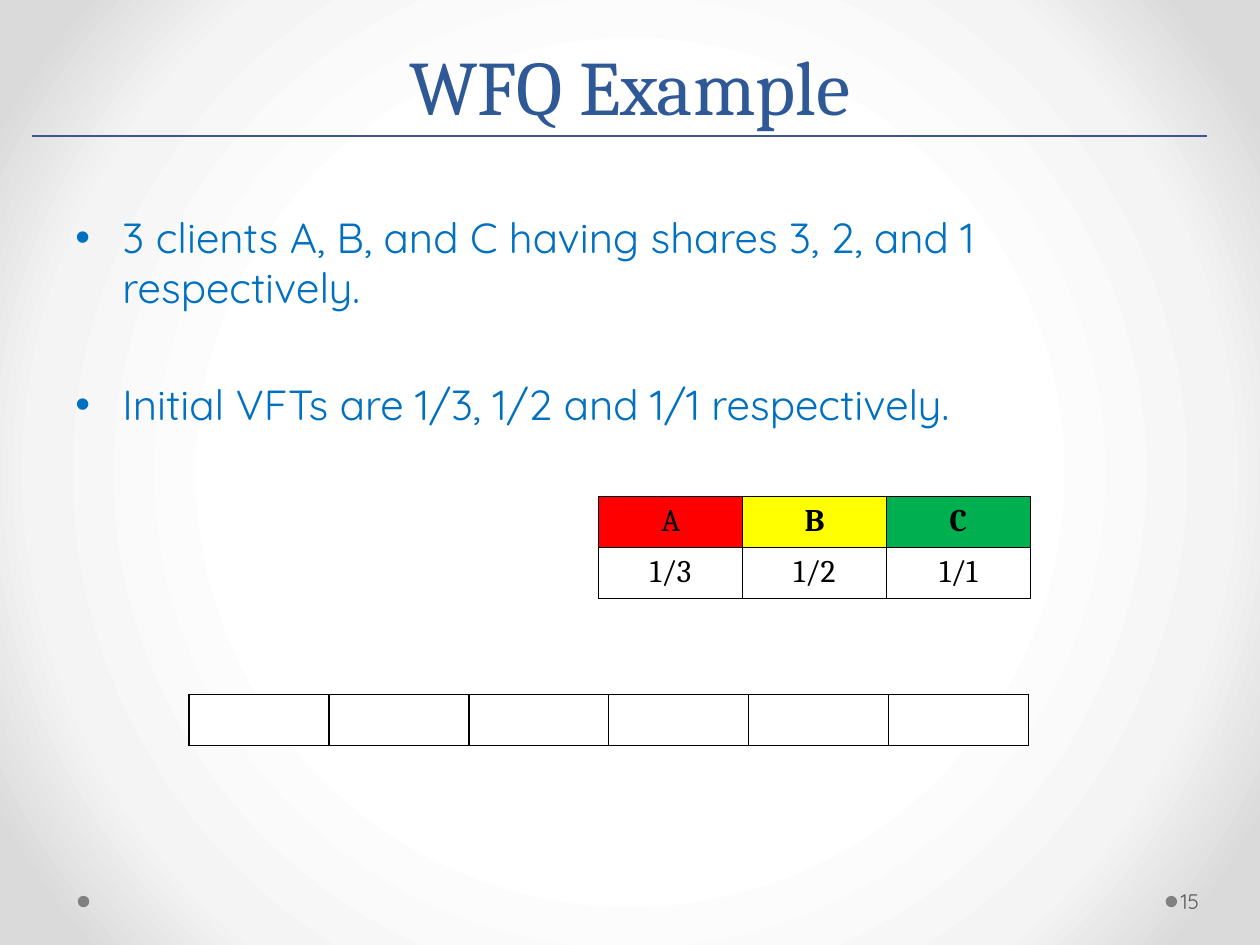
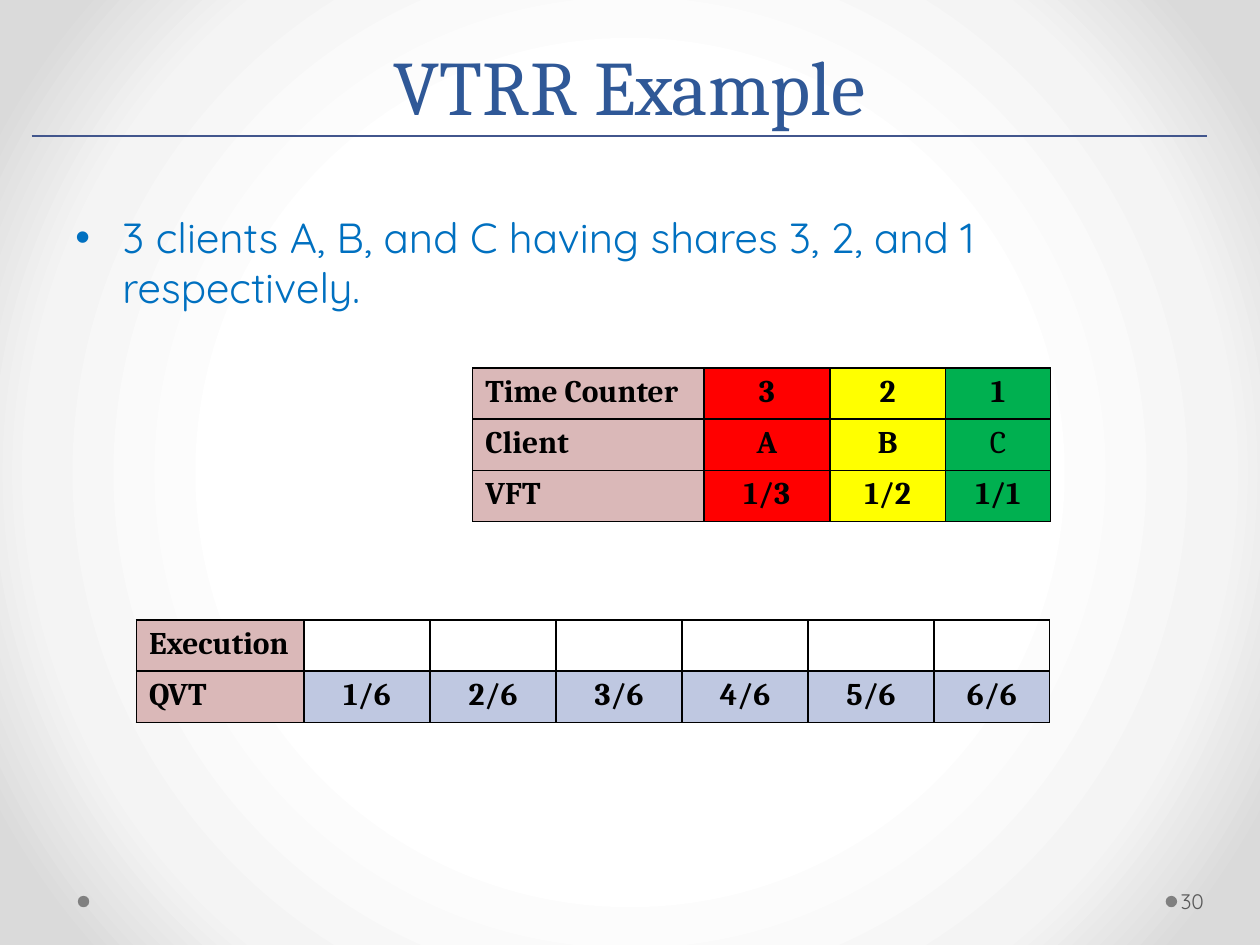
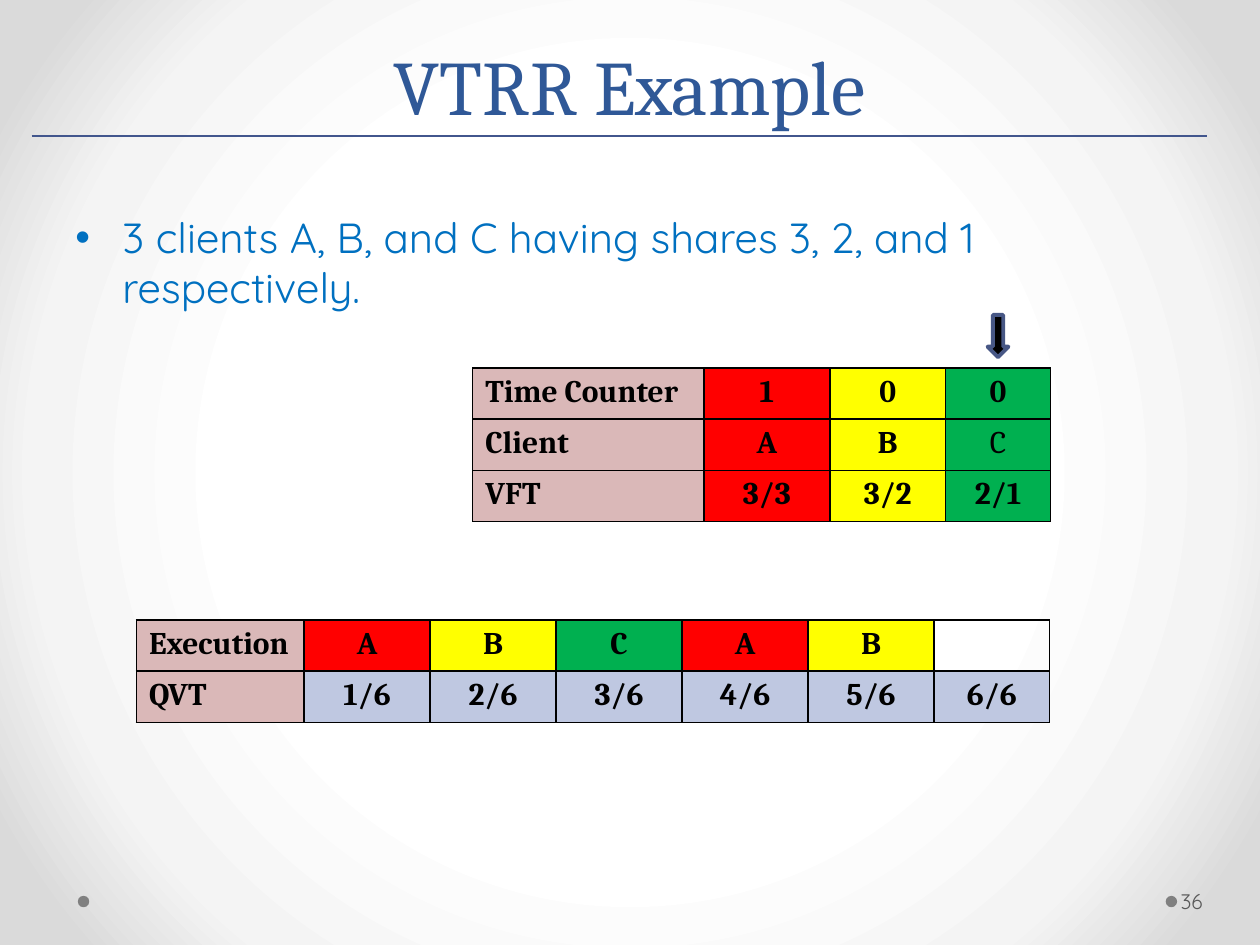
from dataclasses import dataclass

from lxml import etree
from pptx import Presentation
from pptx.dml.color import RGBColor
from pptx.enum.shapes import MSO_CONNECTOR, MSO_SHAPE
from pptx.enum.text import MSO_ANCHOR, PP_ALIGN
from pptx.oxml import parse_xml
from pptx.oxml.ns import nsdecls, qn
from pptx.util import Cm, Pt

STRAIGHT = MSO_CONNECTOR.STRAIGHT
ELLIPSE = MSO_SHAPE.OVAL
DOWN_ARROW = MSO_SHAPE.DOWN_ARROW
TOP, MIDDLE, BOTTOM = MSO_ANCHOR.TOP, MSO_ANCHOR.MIDDLE, MSO_ANCHOR.BOTTOM
LEFT, CENTER = PP_ALIGN.LEFT, PP_ALIGN.CENTER


@dataclass(frozen=True)
class Theme:
    serif: str = "Cambria"
    sans: str = "Quicksand"
    title_size: int = 44
    title_spacing: int = 58
    body_size: int = 24
    table_size: int = 18
    page_size: int = 12
    title: str = "2F5897"
    body: str = "0070C0"
    page: str = "595959"
    rule: str = "42568D"
    dot: str = "808080"
    ink: str = "000000"
    white: str = "FFFFFF"
    header: str = "DAB8B8"
    time: str = "BFC8E1"
    arrow_line: str = "475785"
    backdrop: tuple = ((50, "FFFFFF"), (76, "F4F4F4"), (92, "DADADA"))


THEME = Theme()
CLIENT_FILLS = {"A": "FF0000", "B": "FFFF00", "C": "00B050"}

TITLE_BOX = (1.27, 0.43, 22.86, 2.34)
BODY_BOX = (1.27, 4.14, 22.86, 13.64)
PAGE_BOX = (23.72, 17.65, 1.55, 1.02)
RULE = (0.64, 2.74, 24.33, 2.74)
DOT_LEFTS, DOT_TOP, DOT_SIZE = (23.5, 1.57), 18.06, 0.23
ROW_HEIGHT = 1.03
BULLET_INDENT = 0.95
BULLET_GAPS = (4.8, 38)

SHARES_ORIGIN, SHARES_COLUMNS = (12.07, 10.01), (2.9,) * 3
SLOTS_ORIGIN, SLOTS_COLUMNS = (3.81, 14), (2.82,) * 6
CLIENTS_ORIGIN, CLIENTS_COLUMNS = (9.53, 7.42), (4.66, 2.54, 2.33, 2.12)
EXECUTION_ORIGIN = (2.75, 12.5)
EXECUTION_COLUMNS = (3.38,) + (2.54,) * 5 + (2.33,)
ARROW_WIDTH, ARROW_HEIGHT, ARROW_RISE = 0.42, 0.85, 1.07

CLIENTS_TEXT = "3 clients A, B, and C having shares 3, 2, and 1 respectively."


@dataclass(frozen=True)
class Entry:
    text: str = ""
    fill: str = ""
    bold: bool = True
    alignment: int = CENTER


def set_values(target, values):
    for name, value in values.items():
        setattr(target, name, value)


def lengths(box):
    return [Cm(value) for value in box]


def format_paragraph(paragraph, text, font, size, color, bold=False):
    run = paragraph.add_run()
    run.text = text
    set_values(run.font, {"name": font, "size": Pt(size), "bold": bold})
    run.font.color.rgb = RGBColor.from_string(color)


def fill_shape(shape, color):
    shape.shadow.inherit = False
    shape.fill.solid()
    shape.fill.fore_color.rgb = RGBColor.from_string(color)


def set_backdrop(presentation):
    master = presentation.slide_master
    master.background.fill.solid()
    stops = "".join(
        f'<a:gs pos="{position * 1000}"><a:srgbClr val="{color}"/></a:gs>'
        for position, color in THEME.backdrop
    )
    gradient = parse_xml(
        f'<a:gradFill {nsdecls("a")} rotWithShape="1"><a:gsLst>{stops}</a:gsLst>'
        '<a:path path="circle">'
        '<a:fillToRect l="50000" t="50000" r="50000" b="50000"/>'
        "</a:path></a:gradFill>"
    )
    properties = master.element.find(".//" + qn("p:bgPr"))
    properties.replace(properties.find(qn("a:solidFill")), gradient)


def add_text_frame(slide, box, anchor):
    frame = slide.shapes.add_textbox(*lengths(box)).text_frame
    set_values(frame, {"word_wrap": True, "vertical_anchor": anchor})
    return frame


def add_title(slide, box, text):
    paragraph = add_text_frame(slide, box, BOTTOM).paragraphs[0]
    set_values(paragraph, {"alignment": CENTER, "line_spacing": Pt(THEME.title_spacing)})
    format_paragraph(paragraph, text, THEME.serif, THEME.title_size, THEME.title)


def add_bullets(slide, box, texts):
    frame = add_text_frame(slide, box, TOP)
    for index, (text, gap) in enumerate(zip(texts, BULLET_GAPS)):
        paragraph = frame.add_paragraph() if index else frame.paragraphs[0]
        paragraph.space_before = Pt(gap)
        format_paragraph(paragraph, text, THEME.sans, THEME.body_size, THEME.body)
        properties = paragraph._p.get_or_add_pPr()
        properties.set("marL", str(Cm(BULLET_INDENT)))
        properties.set("indent", str(-Cm(BULLET_INDENT)))
        etree.SubElement(properties, qn("a:buFont"), typeface="Arial")
        etree.SubElement(properties, qn("a:buChar"), char="•")


def add_page_number(slide, box, number):
    frame = add_text_frame(slide, box, MIDDLE)
    frame.margin_left = Cm(0.08)
    format_paragraph(
        frame.paragraphs[0], str(number), THEME.sans, THEME.page_size, THEME.page
    )


def add_rule(slide, ends):
    rule = slide.shapes.add_connector(STRAIGHT, *lengths(ends))
    rule.line.color.rgb = RGBColor.from_string(THEME.rule)
    rule.line.width = Pt(0.75)
    etree.SubElement(rule._element.spPr, qn("a:effectLst"))


def add_dots(slide):
    for left in DOT_LEFTS:
        box = (left, DOT_TOP, DOT_SIZE, DOT_SIZE)
        dot = slide.shapes.add_shape(ELLIPSE, *lengths(box))
        fill_shape(dot, THEME.dot)
        dot.line.fill.background()


def add_borders(cell):
    properties = cell._tc.get_or_add_tcPr()
    for side in ("lnL", "lnR", "lnT", "lnB"):
        line = etree.SubElement(properties, qn(f"a:{side}"), w=str(Pt(1)))
        fill = etree.SubElement(line, qn("a:solidFill"))
        etree.SubElement(fill, qn("a:srgbClr"), val=THEME.ink)


def fill_cell(cell, entry):
    add_borders(cell)
    if entry.fill:
        cell.fill.solid()
        cell.fill.fore_color.rgb = RGBColor.from_string(entry.fill)
    else:
        cell.fill.background()
    if entry.text:
        paragraph = cell.text_frame.paragraphs[0]
        paragraph.alignment = entry.alignment
        format_paragraph(
            paragraph, entry.text, THEME.serif, THEME.table_size, THEME.ink, entry.bold
        )


def add_grid(slide, origin, columns, rows):
    box = (*origin, sum(columns), ROW_HEIGHT * len(rows))
    table = slide.shapes.add_table(len(rows), len(columns), *lengths(box)).table
    set_values(table, {"first_row": False, "horz_banding": False})
    for column, width in zip(table.columns, columns):
        column.width = Cm(width)
    for row, entries in zip(table.rows, rows):
        row.height = Cm(ROW_HEIGHT)
        for cell, entry in zip(row.cells, entries):
            fill_cell(cell, entry)


def header_entry(text):
    return Entry(text, THEME.header, alignment=LEFT)


def add_clients_table(slide, origin, counters, finish_times):
    labelled = {"Time Counter": counters, "Client": CLIENT_FILLS, "VFT": finish_times}
    rows = [
        [header_entry(label)]
        + [
            Entry(text, fill, bold=text != "C")
            for text, fill in zip(texts, CLIENT_FILLS.values())
        ]
        for label, texts in labelled.items()
    ]
    add_grid(slide, origin, CLIENTS_COLUMNS, rows)


def add_execution_table(slide, origin, executed):
    slots = len(EXECUTION_COLUMNS) - 1
    runs = [Entry(client, CLIENT_FILLS[client]) for client in executed]
    idle = [Entry()] * (slots - len(runs))
    times = [Entry(f"{slot}/{slots}", THEME.time) for slot in range(1, slots + 1)]
    rows = [[header_entry("Execution")] + runs + idle, [header_entry("QVT")] + times]
    add_grid(slide, origin, EXECUTION_COLUMNS, rows)


def add_client_arrow(slide, origin, client):
    column = 1 + list(CLIENT_FILLS).index(client)
    left, top = origin
    center = left + sum(CLIENTS_COLUMNS[:column]) + CLIENTS_COLUMNS[column] / 2
    box = (center - ARROW_WIDTH / 2, top - ARROW_RISE, ARROW_WIDTH, ARROW_HEIGHT)
    arrow = slide.shapes.add_shape(DOWN_ARROW, *lengths(box))
    fill_shape(arrow, THEME.ink)
    arrow.line.color.rgb = RGBColor.from_string(THEME.arrow_line)
    arrow.line.width = Pt(2.25)


def add_base_slide(presentation, title, bullets, number):
    slide = presentation.slides.add_slide(presentation.slide_layouts[6])
    add_dots(slide)
    add_title(slide, TITLE_BOX, title)
    add_bullets(slide, BODY_BOX, bullets)
    add_page_number(slide, PAGE_BOX, number)
    add_rule(slide, RULE)
    return slide


def add_wfq_slide(presentation, number):
    bullets = (CLIENTS_TEXT, "Initial VFTs are 1/3, 1/2 and 1/1 respectively.")
    slide = add_base_slide(presentation, "WFQ Example", bullets, number)
    clients = [
        Entry(client, fill, bold=client != "A") for client, fill in CLIENT_FILLS.items()
    ]
    finish_times = [Entry(text, THEME.white, False) for text in ("1/3", "1/2", "1/1")]
    add_grid(slide, SHARES_ORIGIN, SHARES_COLUMNS, [clients, finish_times])
    slots = [Entry(fill=THEME.white)] * len(SLOTS_COLUMNS)
    add_grid(slide, SLOTS_ORIGIN, SLOTS_COLUMNS, [slots])


def add_vtrr_slide(presentation, number, counters, finish_times, executed="", current=""):
    slide = add_base_slide(presentation, "VTRR Example", (CLIENTS_TEXT,), number)
    add_clients_table(slide, CLIENTS_ORIGIN, counters, finish_times)
    add_execution_table(slide, EXECUTION_ORIGIN, executed)
    if current:
        add_client_arrow(slide, CLIENTS_ORIGIN, current)


def main():
    presentation = Presentation()
    set_values(presentation, {"slide_width": Cm(25.4), "slide_height": Cm(19.05)})
    set_backdrop(presentation)
    add_wfq_slide(presentation, 15)
    add_vtrr_slide(presentation, 30, "321", ("1/3", "1/2", "1/1"))
    add_vtrr_slide(presentation, 36, "100", ("3/3", "3/2", "2/1"), "ABCAB", "C")
    presentation.save("out.pptx")


if __name__ == "__main__":
    main()
